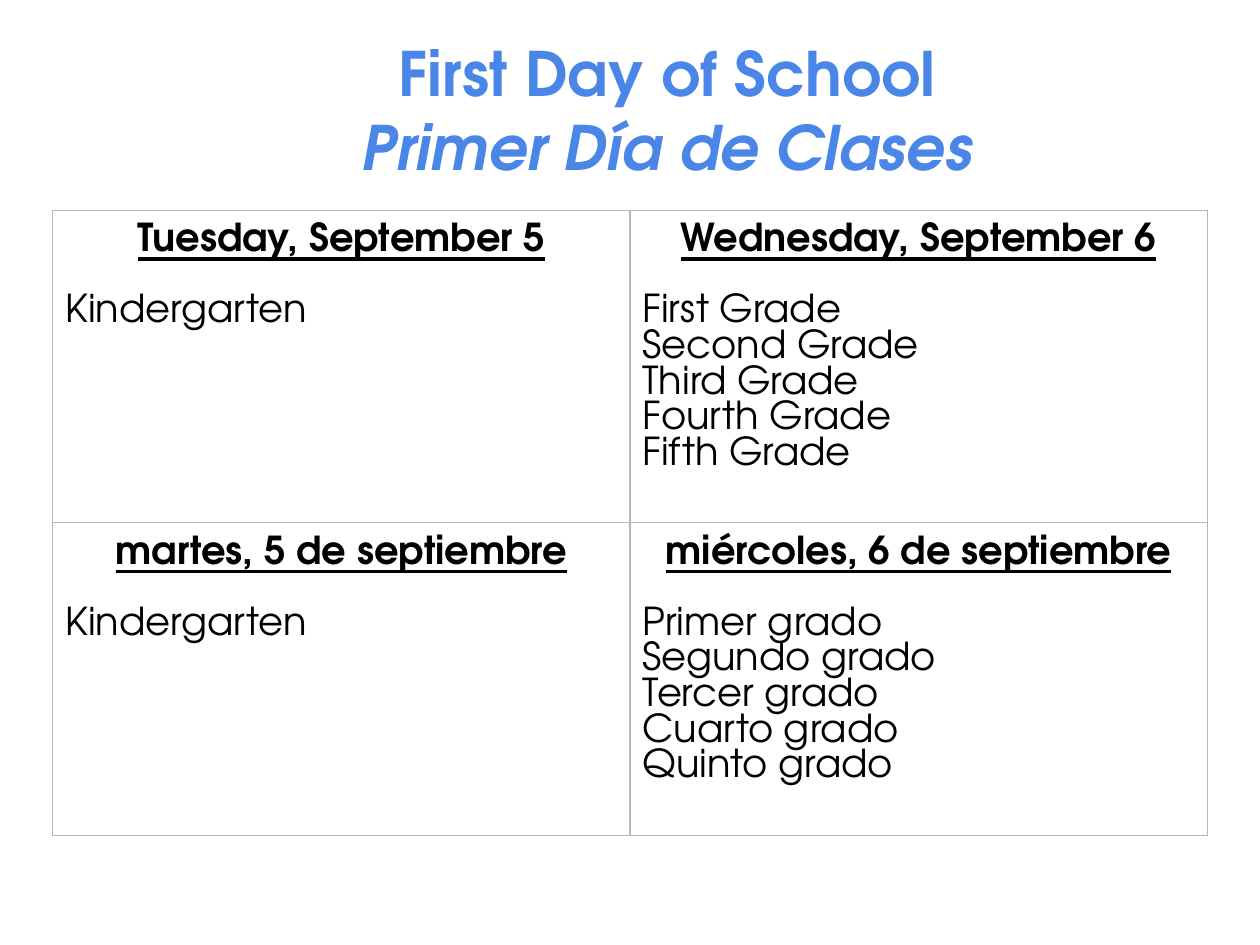
"""Build the bilingual first day of school slide."""
from lxml import etree
from pptx import Presentation
from pptx.dml.color import RGBColor
from pptx.enum import text
from pptx.oxml import ns
from pptx.util import Inches, Pt

TITLE = ["First Day of School", "Primer Día de Clases"]
SCHEDULE = [
    [
        ("Tuesday, September 5", ["Kindergarten"]),
        ("Wednesday, September 6",
         ["First Grade", "Second Grade", "Third Grade", "Fourth Grade", "Fifth Grade"]),
    ],
    [
        ("martes, 5 de septiembre", ["Kindergarten"]),
        ("miércoles, 6 de septiembre",
         ["Primer grado", "Segundo grado", "Tercer grado", "Cuarto grado", "Quinto grado"]),
    ],
]
FONT = "TeX Gyre Adventor"
BLUE = RGBColor(0x4A, 0x86, 0xE8)
BLACK = RGBColor(0, 0, 0)
GRAY = RGBColor(0xB7, 0xB7, 0xB7)
COLUMN_WIDTH, ROW_HEIGHT = 4.58, 2.48
TITLE_PITCH, TABLE_PITCH = Pt(42.3), Pt(20.4)


def style(para, size, color, pitch, bold=False, italic=False, underline=False):
    para.line_spacing = pitch
    para.space_before = para.space_after = Pt(0)
    for span in para.runs:
        font = span.font
        font.name, font.size = FONT, Pt(size)
        font.bold, font.italic, font.underline = bold, italic, underline
        font.color.rgb = color


def add_borders(cell):
    properties = cell._tc.get_or_add_tcPr()
    for index, side in enumerate(("lnL", "lnR", "lnT", "lnB")):
        line = etree.Element(ns.qn("a:" + side), w=str(Pt(0.75)))
        fill = etree.SubElement(line, ns.qn("a:solidFill"))
        etree.SubElement(fill, ns.qn("a:srgbClr"), val=str(GRAY))
        properties.insert(index, line)


def add_title(page):
    box = page.shapes.add_textbox(Inches(1.17), Inches(0.08), Inches(8.25), Inches(1.57))
    frame = box.text_frame
    frame.word_wrap = True
    frame.vertical_anchor = text.MSO_ANCHOR.MIDDLE
    frame.text = "\n".join(TITLE)
    for index, para in enumerate(frame.paragraphs):
        para.alignment = text.PP_ALIGN.CENTER
        style(para, 35, BLUE, TITLE_PITCH, bold=True, italic=index == 1)


def fill_cell(cell, heading, grades):
    cell.fill.background()
    cell.margin_left = cell.margin_right = Inches(0.1)
    cell.margin_top = cell.margin_bottom = Inches(0.1)
    cell.text_frame.text = "\n".join([heading, *grades])
    first, *others = cell.text_frame.paragraphs
    style(first, 22, BLACK, TABLE_PITCH, bold=True, underline=True)
    first.alignment = text.PP_ALIGN.CENTER
    first.space_after = TABLE_PITCH
    for para in others:
        style(para, 22, BLACK, TABLE_PITCH)
    add_borders(cell)


def add_schedule(page):
    rows, columns = len(SCHEDULE), len(SCHEDULE[0])
    table = page.shapes.add_table(
        rows, columns, Inches(0.42), Inches(1.67),
        Inches(COLUMN_WIDTH * columns), Inches(ROW_HEIGHT * rows)).table
    table.first_row = table.horz_banding = False
    for row, days in enumerate(SCHEDULE):
        for column, (heading, grades) in enumerate(days):
            fill_cell(table.cell(row, column), heading, grades)


def main():
    deck = Presentation()
    deck.slide_width, deck.slide_height = Inches(10), Inches(7.5)
    page = deck.slides.add_slide(deck.slide_layouts[6])
    add_title(page)
    add_schedule(page)
    deck.save("out.pptx")


if __name__ == "__main__":
    main()
